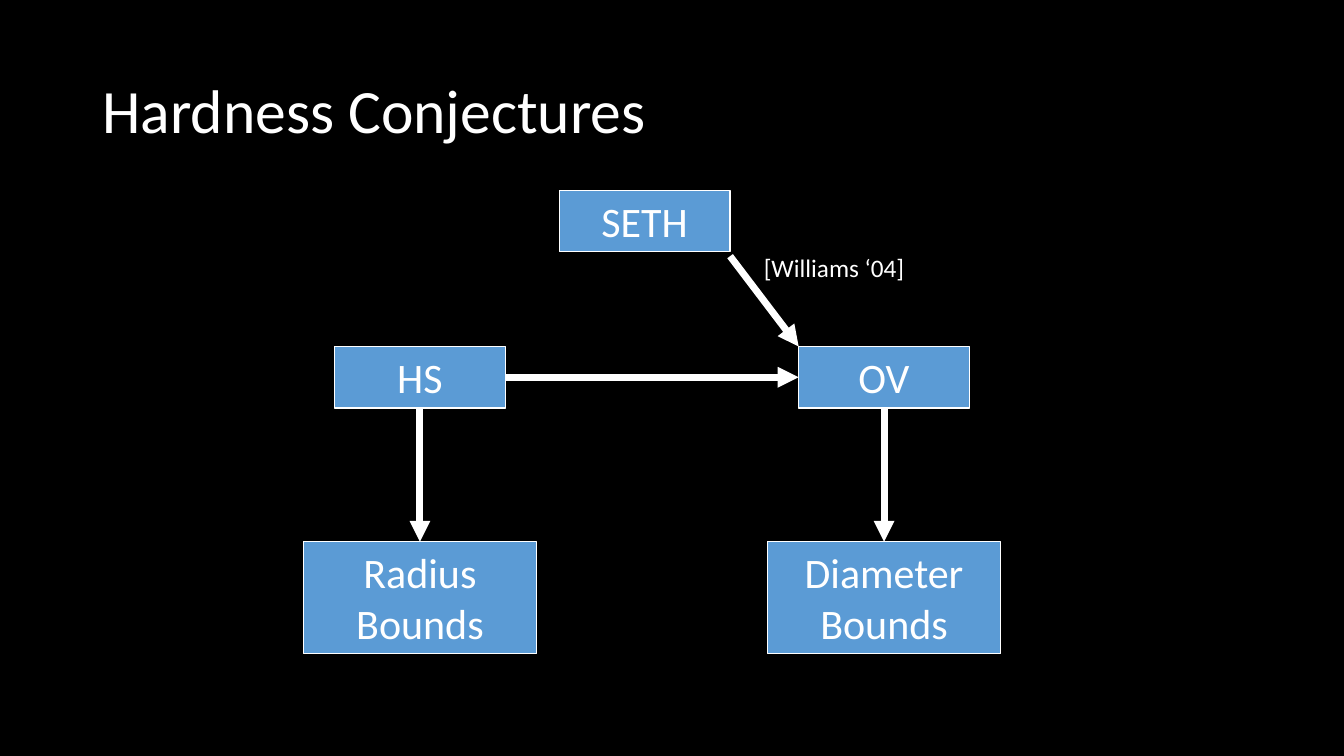
from pptx import Presentation
from pptx.dml.color import RGBColor
from pptx.enum.shapes import MSO_CONNECTOR, MSO_SHAPE
from pptx.enum.text import MSO_ANCHOR, MSO_AUTO_SIZE, PP_ALIGN
from pptx.oxml.ns import qn
from pptx.util import Pt
from lxml.etree import SubElement

COLORS = {"back": "000000", "text": "FFFFFF", "node": "5B9BD5"}
FONT = "Calibri"
BOTTOM, RIGHT, TOP, LEFT = 2, 3, 0, 1  # connection sites of a rectangle


def color(name):
    return RGBColor.from_string(COLORS[name])


def style(para, size, align):
    para.alignment = align
    para.font.name = FONT
    para.font.size = Pt(size)
    para.font.color.rgb = color("text")


def add_title(slide, left, top, width, height):
    title = slide.shapes.title
    title.left, title.top = Pt(left), Pt(top)
    title.width, title.height = Pt(width), Pt(height)
    frame = title.text_frame
    frame.text = "Hardness Conjectures"
    frame.vertical_anchor = MSO_ANCHOR.MIDDLE
    para = frame.paragraphs[0]
    para.line_spacing = 0.9
    style(para, 44, PP_ALIGN.LEFT)


def add_node(slide, text, mid, top, width, height):
    node = slide.shapes.add_shape(
        MSO_SHAPE.RECTANGLE, Pt(mid - width / 2), Pt(top), Pt(width), Pt(height))
    node.shadow.inherit = False
    node.fill.solid()
    node.fill.fore_color.rgb = color("node")
    node.line.color.rgb = color("text")
    node.line.width = Pt(0.75)
    frame = node.text_frame
    frame.text = text
    frame.word_wrap = True
    frame.auto_size = MSO_AUTO_SIZE.SHAPE_TO_FIT_TEXT
    frame.vertical_anchor = MSO_ANCHOR.TOP
    style(frame.paragraphs[0], 30, PP_ALIGN.CENTER)
    return node


def add_arrow(slide, x1, y1, x2, y2):
    arrow = slide.shapes.add_connector(MSO_CONNECTOR.STRAIGHT, x1, y1, x2, y2)
    arrow.line.color.rgb = color("text")
    arrow.line.width = Pt(5)
    SubElement(arrow.line._get_or_add_ln(), qn("a:tailEnd"), type="triangle")
    SubElement(arrow._element.spPr, qn("a:effectLst"))
    return arrow


def link(slide, start, out, end, into):
    arrow = add_arrow(slide, 0, 0, 0, 0)
    arrow.begin_connect(start, out)
    arrow.end_connect(end, into)


def add_cite(slide, left, top, width, height):
    box = slide.shapes.add_textbox(Pt(left), Pt(top), Pt(width), Pt(height))
    frame = box.text_frame
    frame.word_wrap = True
    frame.auto_size = MSO_AUTO_SIZE.SHAPE_TO_FIT_TEXT
    frame.text = "[Williams ‘04]"
    style(frame.paragraphs[0], 18, PP_ALIGN.LEFT)


def add_graph(slide, left, top, width, height):
    small, large = (122, 44), (167, 80)
    west, east = left + large[0] / 2, left + width - large[0] / 2
    row, base = top + 111.5, top + height - large[1]

    # Conjectures and the bounds they imply
    seth = add_node(slide, "SETH", left + 244, top, *small)
    ov = add_node(slide, "OV", east, row, *small)
    hs = add_node(slide, "HS", west, row, *small)
    diam = add_node(slide, "Diameter Bounds", east, base, *large)
    rad = add_node(slide, "Radius Bounds", west, base, *large)

    # Reductions
    add_arrow(slide, seth.left + seth.width, seth.top + seth.height + Pt(3),
              ov.left, ov.top)
    add_cite(slide, left + 322, top + 41, 130, 29)
    link(slide, ov, BOTTOM, diam, TOP)
    link(slide, hs, BOTTOM, rad, TOP)
    link(slide, hs, RIGHT, ov, LEFT)


def main():
    deck = Presentation()
    deck.slide_width, deck.slide_height = Pt(960), Pt(540)
    slide = deck.slides.add_slide(deck.slide_layouts[5])
    slide.background.fill.solid()
    slide.background.fill.fore_color.rgb = color("back")
    add_title(slide, 66, 29, 828, 104)
    add_graph(slide, 216.5, 136, 498.5, 331)
    deck.save("out.pptx")


if __name__ == "__main__":
    main()
